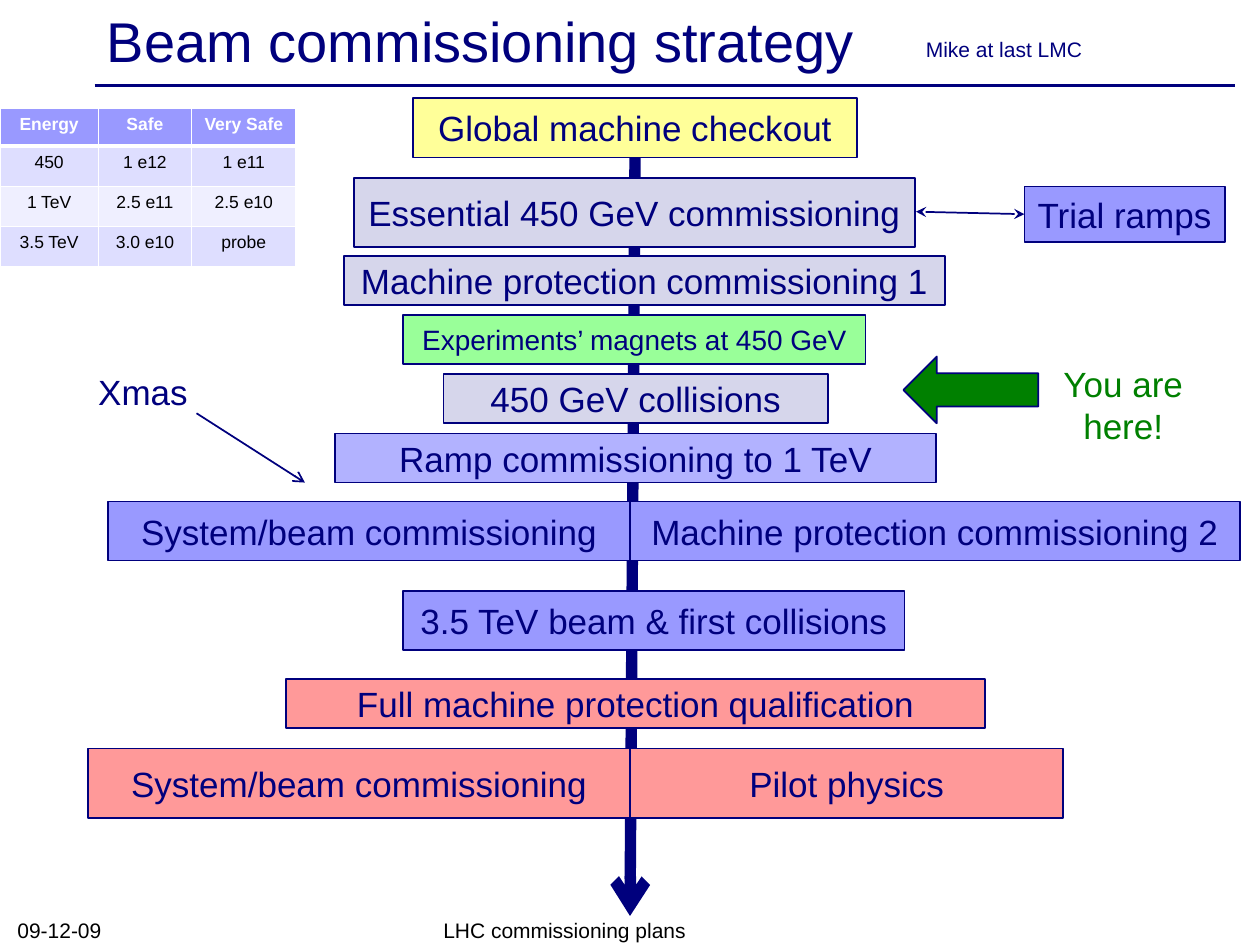
from dataclasses import dataclass

from lxml.etree import SubElement
from pptx import Presentation
from pptx.dml.color import RGBColor
from pptx.enum.shapes import MSO_CONNECTOR, MSO_SHAPE
from pptx.enum.text import MSO_ANCHOR, PP_ALIGN
from pptx.oxml.ns import qn
from pptx.util import Inches, Pt


@dataclass(frozen=True)
class Theme:
    font: str = "Arial"
    navy: str = "00007D"
    black: str = "000000"
    white: str = "FFFFFF"
    green: str = "008000"
    yellow: str = "FFFF99"
    grey: str = "D6D6EB"
    mint: str = "99FF99"
    lilac: str = "B2B2FF"
    blue: str = "9999FF"
    red: str = "FF9999"
    band_dark: str = "DEDEFF"
    band_light: str = "EFEFFF"
    title: int = 32
    body: int = 20
    small_body: int = 16
    note: int = 12
    table: int = 10


class SlideBuilder:
    def __init__(self, slide, theme):
        self.slide = slide
        self.theme = theme

    def set_text(self, text_frame, text, size, color, align, anchor, bold=False):
        text_frame.text = text
        text_frame.vertical_anchor = anchor
        paragraph = text_frame.paragraphs[0]
        paragraph.alignment = align
        font = paragraph.runs[0].font
        font.name, font.size, font.bold = self.theme.font, Pt(size), bold
        font.color.rgb = RGBColor.from_string(color)

    def text(self, text, left, top, width, height, size, color,
             align=PP_ALIGN.LEFT, anchor=MSO_ANCHOR.BOTTOM):
        box = self.slide.shapes.add_textbox(
            Inches(left), Inches(top), Inches(width), Inches(height))
        box.text_frame.word_wrap = True
        self.set_text(box.text_frame, text, size, color, align, anchor)

    def label(self, text, left, top, width, height, color):
        self.text(text, left, top, width, height, self.theme.body, color,
                  PP_ALIGN.CENTER, MSO_ANCHOR.TOP)

    def shape(self, kind, left, top, width, height, fill):
        shape = self.slide.shapes.add_shape(
            kind, Inches(left), Inches(top), Inches(width), Inches(height))
        shape.shadow.inherit = False
        shape.fill.solid()
        shape.fill.fore_color.rgb = RGBColor.from_string(fill)
        shape.line.color.rgb = RGBColor.from_string(self.theme.navy)
        shape.line.width = Pt(1)
        return shape

    def step(self, text, left, top, width, height, fill, size=None):
        shape = self.shape(MSO_SHAPE.RECTANGLE, left, top, width, height, fill)
        shape.text_frame.word_wrap = False
        self.set_text(shape.text_frame, text, size or self.theme.body,
                      self.theme.navy, PP_ALIGN.CENTER, MSO_ANCHOR.MIDDLE)

    def line(self, start, end, width, head=None, tail=None):
        connector = self.slide.shapes.add_connector(
            MSO_CONNECTOR.STRAIGHT, *map(Inches, (*start, *end)))
        connector.line.color.rgb = RGBColor.from_string(self.theme.navy)
        connector.line.width = Pt(width)
        properties = connector._element.spPr
        line = properties.find(qn("a:ln"))
        for tag, arrow in (("a:headEnd", head), ("a:tailEnd", tail)):
            if arrow:
                SubElement(line, qn(tag), type=arrow)
        SubElement(properties, qn("a:effectLst"))

    def cell_borders(self, cell, bottom_width):
        properties = cell._tc.get_or_add_tcPr()
        widths = {"a:lnL": 1, "a:lnR": 1, "a:lnT": 1, "a:lnB": bottom_width}
        for tag, width in widths.items():
            border = SubElement(properties, qn(tag), w=str(Pt(width)))
            fill = SubElement(border, qn("a:solidFill"))
            SubElement(fill, qn("a:srgbClr"), val=self.theme.white)

    def table(self, rows, left, top, widths, heights):
        theme = self.theme
        table = self.slide.shapes.add_table(
            len(rows), len(widths), Inches(left), Inches(top),
            Inches(sum(widths)), Inches(sum(heights))).table
        for column, width in zip(table.columns, widths):
            column.width = Inches(width)
        for index, values in enumerate(rows):
            table.rows[index].height = Inches(heights[index])
            header = index == 0
            band = theme.band_dark if index % 2 else theme.band_light
            for column, value in enumerate(values):
                cell = table.cell(index, column)
                self.set_text(cell.text_frame, value, theme.table,
                              theme.white if header else theme.black,
                              PP_ALIGN.CENTER, MSO_ANCHOR.TOP, header)
                self.cell_borders(cell, 3 if header else 1)
                cell.fill.solid()
                cell.fill.fore_color.rgb = RGBColor.from_string(
                    theme.blue if header else band)


def main():
    theme = Theme()
    presentation = Presentation()
    presentation.slide_width, presentation.slide_height = Inches(10), Inches(7.5)
    slide = presentation.slides.add_slide(presentation.slide_layouts[6])
    builder = SlideBuilder(slide, theme)

    builder.line((0.75, 0.68), (9.8, 0.68), 2)
    builder.line((5.04, 1.25), (5, 7.27), 6.5, tail="arrow")
    builder.text("Beam commissioning strategy", 0.75, 0.03, 9, 0.57,
                 theme.title, theme.navy, anchor=MSO_ANCHOR.MIDDLE)
    builder.text("Mike at last LMC", 7.25, 0.25, 2.33, 0.29, theme.note, theme.navy)
    builder.text("09-12-09", 0.04, 7.24, 2.33, 0.29, theme.note, theme.black)
    builder.text("LHC commissioning plans", 3.42, 7.25, 3.17, 0.28,
                 theme.note, theme.black)

    steps = [
        ("Global machine checkout", 3.28, 0.78, 3.52, 0.47, theme.yellow),
        ("Essential 450 GeV commissioning", 2.81, 1.41, 4.45, 0.55, theme.grey),
        ("Machine protection commissioning 1", 2.73, 2.03, 4.77, 0.39, theme.grey),
        ("Experiments’ magnets at 450 GeV", 3.2, 2.5, 3.67, 0.39, theme.mint,
         theme.small_body),
        ("450 GeV collisions", 3.52, 2.97, 3.05, 0.39, theme.grey),
        ("Ramp commissioning to 1 TeV", 2.66, 3.44, 4.77, 0.39, theme.lilac),
        ("System/beam commissioning", 0.86, 3.98, 4.14, 0.47, theme.blue),
        ("Machine protection commissioning 2", 5, 3.98, 4.84, 0.47, theme.blue),
        ("3.5 TeV beam & first collisions", 3.2, 4.69, 3.98, 0.47, theme.blue),
        ("Full machine protection qualification", 2.27, 5.39, 5.55, 0.39, theme.red),
        ("System/beam commissioning", 0.7, 5.94, 4.3, 0.55, theme.red),
        ("Pilot physics", 5, 5.94, 3.44, 0.55, theme.red),
        ("Trial ramps", 8.13, 1.48, 1.59, 0.44, theme.blue),
    ]
    for step in steps:
        builder.step(*step)

    beam_limits = [
        ("Energy", "Safe", "Very Safe"),
        ("450", "1 e12", "1 e11"),
        ("1 TeV", "2.5 e11", "2.5 e10"),
        ("3.5 TeV", "3.0 e10", "probe"),
    ]
    builder.table(beam_limits, 0, 0.86, (0.78, 0.74, 0.83), (0.3, 0.32, 0.32, 0.32))

    builder.line((7.27, 1.68), (8.13, 1.7), 1, head="stealth", tail="stealth")
    builder.line((1.56, 3.28), (2.42, 3.83), 1, tail="arrow")
    builder.label("Xmas", 0.55, 2.89, 1.17, 0.44, theme.navy)
    builder.shape(MSO_SHAPE.LEFT_ARROW, 7.17, 2.83, 1.07, 0.53, theme.green)
    builder.label("You are here!", 8.33, 2.83, 1.17, 0.77, theme.green)

    presentation.save("out.pptx")


if __name__ == "__main__":
    main()
